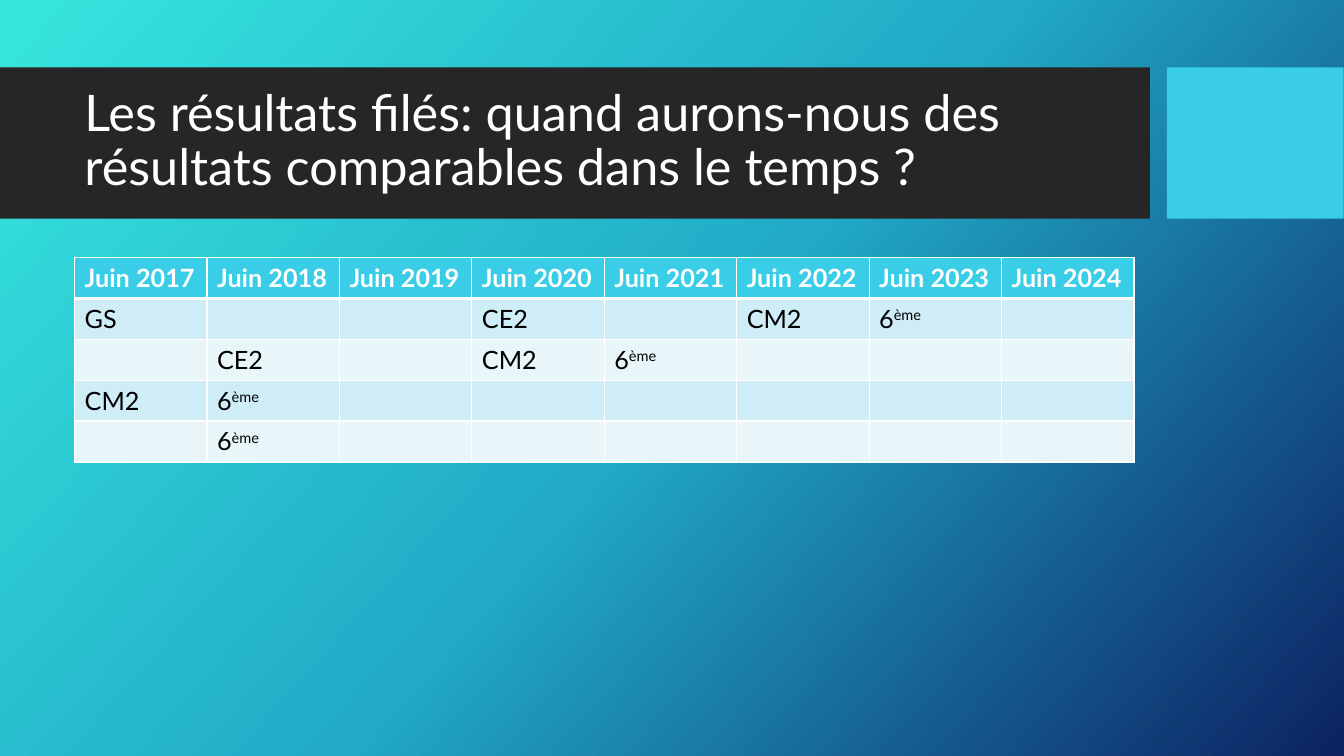
from copy import deepcopy
from dataclasses import dataclass

from lxml.etree import SubElement
from pptx import Presentation
from pptx.dml.color import RGBColor as RGB
from pptx.enum.shapes import MSO_SHAPE as Shape
from pptx.enum.text import MSO_ANCHOR as Anchor
from pptx.oxml.ns import qn
from pptx.util import Cm, Pt


@dataclass(frozen=True)
class Theme:
    font: str = "Lato"
    white: str = "FFFFFF"
    black: str = "000000"
    dark: str = "262626"
    accent: str = "39CDE7"
    bands: tuple = ("CEEDF6", "E8F6FA")
    gradient: tuple = ((0, "36E6DD"), (0.5, "21ABC8"), (1, "0C2263"))
    gradient_angle: int = 42
    title_size: int = 36
    table_size: int = 18
    thin: int = 1
    thick: int = 3


@dataclass(frozen=True)
class Bar:
    left: float
    width: float
    color: str


@dataclass(frozen=True)
class CellStyle:
    fill: str
    color: str
    bold: bool
    top: int
    bottom: int


T = Theme()
BAR_TOP, BAR_HEIGHT = 1.7, 3.81
BARS = (Bar(0, 28.98, T.dark), Bar(29.41, 4.45, T.accent))
TITLE = "Les résultats filés: quand aurons-nous des résultats comparables dans le temps ?"
LEFT, WIDTH = 1.88, 26.7
TABLE_TOP, ROW_HEIGHT = 6.49, 1.03
YEARS = range(2017, 2025)
SIXTH = "6ème"
# Each cohort gives the class tested in a given year
COHORTS = (
    {2017: "GS", 2020: "CE2", 2022: "CM2", 2023: SIXTH},
    {2018: "CE2", 2020: "CM2", 2021: SIXTH},
    {2017: "CM2", 2018: SIXTH},
    {2018: SIXTH},
)


def add_run(p, text: str, size: int, color: str, bold: bool = False):
    r = p.add_run()
    r.text = text
    for name, value in {"name": T.font, "size": Pt(size), "bold": bold}.items():
        setattr(r.font, name, value)
    r.font.color.rgb = RGB.from_string(color)
    return r


def paint_background(s) -> None:
    fill = s.background.fill
    fill.gradient()
    # python-pptx counts angles counter-clockwise
    fill.gradient_angle = 360 - T.gradient_angle
    stops = s.element.find(".//" + qn("a:gsLst"))
    stops.append(deepcopy(stops[0]))
    for stop, (position, color) in zip(fill.gradient_stops, T.gradient):
        stop.position = position
        stop.color.rgb = RGB.from_string(color)


def add_bar(s, bar: Bar) -> None:
    sp = s.shapes.add_shape(Shape.RECTANGLE, Cm(bar.left), Cm(BAR_TOP),
                            Cm(bar.width), Cm(BAR_HEIGHT))
    sp.shadow.inherit = False
    sp.fill.solid()
    sp.fill.fore_color.rgb = RGB.from_string(bar.color)
    sp.line.fill.background()


def add_title(s) -> None:
    tf = s.shapes.add_textbox(Cm(LEFT), Cm(2.08), Cm(WIDTH), Cm(3)).text_frame
    for name, value in {"word_wrap": True, "vertical_anchor": Anchor.MIDDLE}.items():
        setattr(tf, name, value)
    p = tf.paragraphs[0]
    p.line_spacing = 0.9
    add_run(p, TITLE, T.title_size, T.white)


def set_borders(cell, style: CellStyle) -> None:
    tc_pr = cell._tc.get_or_add_tcPr()
    widths = {"L": T.thin, "R": T.thin, "T": style.top, "B": style.bottom}
    for side, width in widths.items():
        ln = SubElement(tc_pr, qn(f"a:ln{side}"), w=str(Pt(width)))
        SubElement(SubElement(ln, qn("a:solidFill")), qn("a:srgbClr"), val=T.white)


def fill_cell(cell, text: str, style: CellStyle) -> None:
    # Borders come before the fill in the cell properties
    set_borders(cell, style)
    cell.fill.solid()
    cell.fill.fore_color.rgb = RGB.from_string(style.fill)
    p = cell.text_frame.paragraphs[0]
    p.font.size = Pt(T.table_size)
    base, suffix = ("6", "ème") if text == SIXTH else (text, "")
    if base:
        add_run(p, base, T.table_size, style.color, style.bold)
    if suffix:
        r = add_run(p, suffix, T.table_size, style.color, style.bold)
        r.font._element.set("baseline", "30000")


def add_schedule(s) -> None:
    header = {year: f"Juin {year}" for year in YEARS}
    rows = (header, *COHORTS)
    table = s.shapes.add_table(len(rows), len(YEARS), Cm(LEFT), Cm(TABLE_TOP),
                               Cm(WIDTH), Cm(ROW_HEIGHT * len(rows))).table
    for i, texts in enumerate(rows):
        table.rows[i].height = Cm(ROW_HEIGHT)
        if i == 0:
            style = CellStyle(T.accent, T.white, True, T.thin, T.thick)
        else:
            top = T.thick if i == 1 else T.thin
            style = CellStyle(T.bands[(i - 1) % 2], T.black, False, top, T.thin)
        for j, year in enumerate(YEARS):
            fill_cell(table.cell(i, j), texts.get(year, ""), style)


def main() -> None:
    prs = Presentation()
    prs.slide_width, prs.slide_height = Cm(33.87), Cm(19.05)
    s = prs.slides.add_slide(prs.slide_layouts[6])
    paint_background(s)
    # Title band
    for bar in BARS:
        add_bar(s, bar)
    add_title(s)
    # Schedule of results
    add_schedule(s)
    prs.save("out.pptx")


if __name__ == "__main__":
    main()
